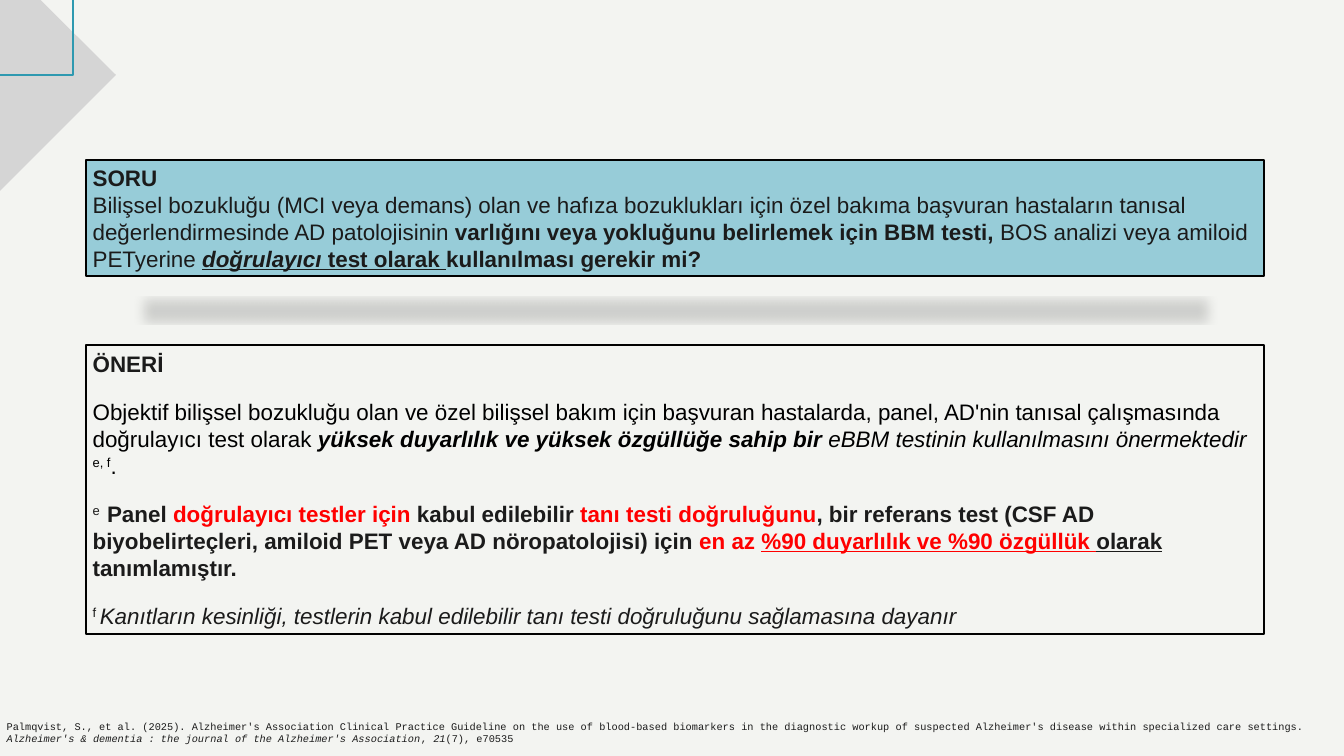
"""Build the question and recommendation slide on blood-based biomarker testing."""
from lxml import etree
from pptx import Presentation
from pptx import util as u
from pptx.dml.color import RGBColor
from pptx.enum import shapes, text
from pptx.oxml import ns

SCALE = 914400 / 67.2
INK, BLACK, RED = "1B1B1B", "000000", "FF0000"


def px(length):
    return u.Emu(round(length * SCALE))


def add_span(para, words, size=24, name="Arial", color=INK, bold=False,
             italic=False, underline=False, raised=False):
    span = para.add_run()
    span.text = words
    font = span.font
    font.size, font.name = u.Pt(size), name
    font.bold, font.italic, font.underline = bold, italic, underline
    font.color.rgb = RGBColor.from_string(color)
    if raised:
        span._r.get_or_add_rPr().set("baseline", "30000")


deck = Presentation()
deck.slide_width, deck.slide_height = px(1344), px(756)
page = deck.slides.add_slide(deck.slide_layouts[6])
page.background.fill.solid()
page.background.fill.fore_color.rgb = RGBColor.from_string("F3F4F1")

corners = [
    ([(-190, 75), (-37, -77), (116, 75), (-37, 228)], "D5D5D5", None),
    ([(-118, -115), (73, -115), (73, 75), (-118, 75)], None, "2E99B0"),
]
for points, fill, line in corners:
    builder = page.shapes.build_freeform(*points[0], scale=SCALE)
    builder.add_line_segments(points[1:], close=True)
    corner = builder.convert_to_shape()
    corner.shadow.inherit = False
    if fill:
        corner.fill.solid()
        corner.fill.fore_color.rgb = RGBColor.from_string(fill)
        corner.line.fill.background()
    else:
        corner.fill.background()
        corner.line.color.rgb = RGBColor.from_string(line)
        corner.line.width = u.Pt(3)

question = [
    [("SORU", dict(bold=True))],
    [
        ("Bilişsel bozukluğu (MCI veya demans) olan ve hafıza bozuklukları için özel bakıma başvuran "
         "hastaların tanısal değerlendirmesinde AD patolojisinin ", {}),
        ("varlığını veya yokluğunu belirlemek için BBM testi, ", dict(bold=True)),
        ("BOS analizi veya amiloid PETyerine ", {}),
        ("doğrulayıcı", dict(bold=True, italic=True, underline=True)),
        (" test olarak ", dict(bold=True, underline=True)),
        ("kullanılması gerekir mi?", dict(bold=True)),
    ],
]
recommendation = [
    [("ÖNERİ", dict(bold=True))],
    [
        ("Objektif bilişsel bozukluğu olan ve özel bilişsel bakım için başvuran hastalarda, panel, AD'nin "
         "tanısal çalışmasında doğrulayıcı test olarak ", dict(color=BLACK)),
        ("yüksek duyarlılık ve yüksek özgüllüğe sahip bir ", dict(color=BLACK, bold=True, italic=True)),
        ("eBBM testinin kullanılmasını önermektedir", dict(color=BLACK, italic=True)),
        ("  e, f", dict(color=BLACK, raised=True)),
        (".", dict(color=BLACK)),
    ],
    [
        ("e  ", dict(raised=True)),
        ("Panel ", dict(bold=True)),
        ("doğrulayıcı testler için", dict(color=RED, bold=True)),
        (" kabul edilebilir ", dict(bold=True)),
        ("tanı testi doğruluğunu", dict(color=RED, bold=True)),
        (", bir referans test (CSF AD biyobelirteçleri, amiloid PET veya AD nöropatolojisi) için ",
         dict(bold=True)),
        ("en az ", dict(color=RED, bold=True)),
        ("%90 duyarlılık ve %90 özgüllük ", dict(color=RED, bold=True, underline=True)),
        ("olarak ", dict(bold=True, underline=True)),
        ("tanımlamıştır.", dict(bold=True)),
    ],
    [
        ("f ", dict(raised=True)),
        ("Kanıtların kesinliği, testlerin kabul edilebilir tanı testi doğruluğunu sağlamasına dayanır ",
         dict(italic=True)),
    ],
]
panels = [(160, 116, "97CCD8", 0, question), (345, 289, None, 22.5, recommendation)]
for top, height, fill, gap, paragraphs in panels:
    box = page.shapes.add_shape(shapes.MSO_SHAPE.RECTANGLE, px(86), px(top), px(1178), px(height))
    box.shadow.inherit = False
    box.line.color.rgb = RGBColor.from_string(BLACK)
    box.line.width = u.Pt(3)
    if fill:
        box.fill.solid()
        box.fill.fore_color.rgb = RGBColor.from_string(fill)
        effects = box._element.spPr.find(ns.qn("a:effectLst"))
        shadow = etree.SubElement(effects, ns.qn("a:outerShdw"), blurRad="152400", dist="317500",
                                  dir="5400000", sx="90000", sy="-19000", rotWithShape="0")
        shade = etree.SubElement(shadow, ns.qn("a:srgbClr"), val=BLACK)
        etree.SubElement(shade, ns.qn("a:alpha"), val="15000")
    else:
        box.fill.background()
    frame = box.text_frame
    frame.word_wrap = True
    frame.vertical_anchor = text.MSO_ANCHOR.MIDDLE
    for index, spans in enumerate(paragraphs):
        para = frame.add_paragraph() if index else frame.paragraphs[0]
        para.alignment = text.PP_ALIGN.LEFT
        para.space_before = u.Pt(gap if index else 0)
        for words, style in spans:
            add_span(para, words, **style)

citation = page.shapes.add_textbox(px(0), px(717), px(1349), px(31))
citation.text_frame.word_wrap = True
reference = [
    ("Palmqvist, S., et al. (2025). Alzheimer's Association Clinical Practice Guideline on the use of "
     "blood-based biomarkers in the diagnostic workup of suspected Alzheimer's disease within "
     "specialized care settings. ", False),
    ("Alzheimer's & dementia : the journal of the Alzheimer's Association", True),
    (", ", False),
    ("21", True),
    ("(7), e70535", False),
]
for words, italic in reference:
    add_span(citation.text_frame.paragraphs[0], words, size=11, name="Courier New", italic=italic)

deck.save("out.pptx")
